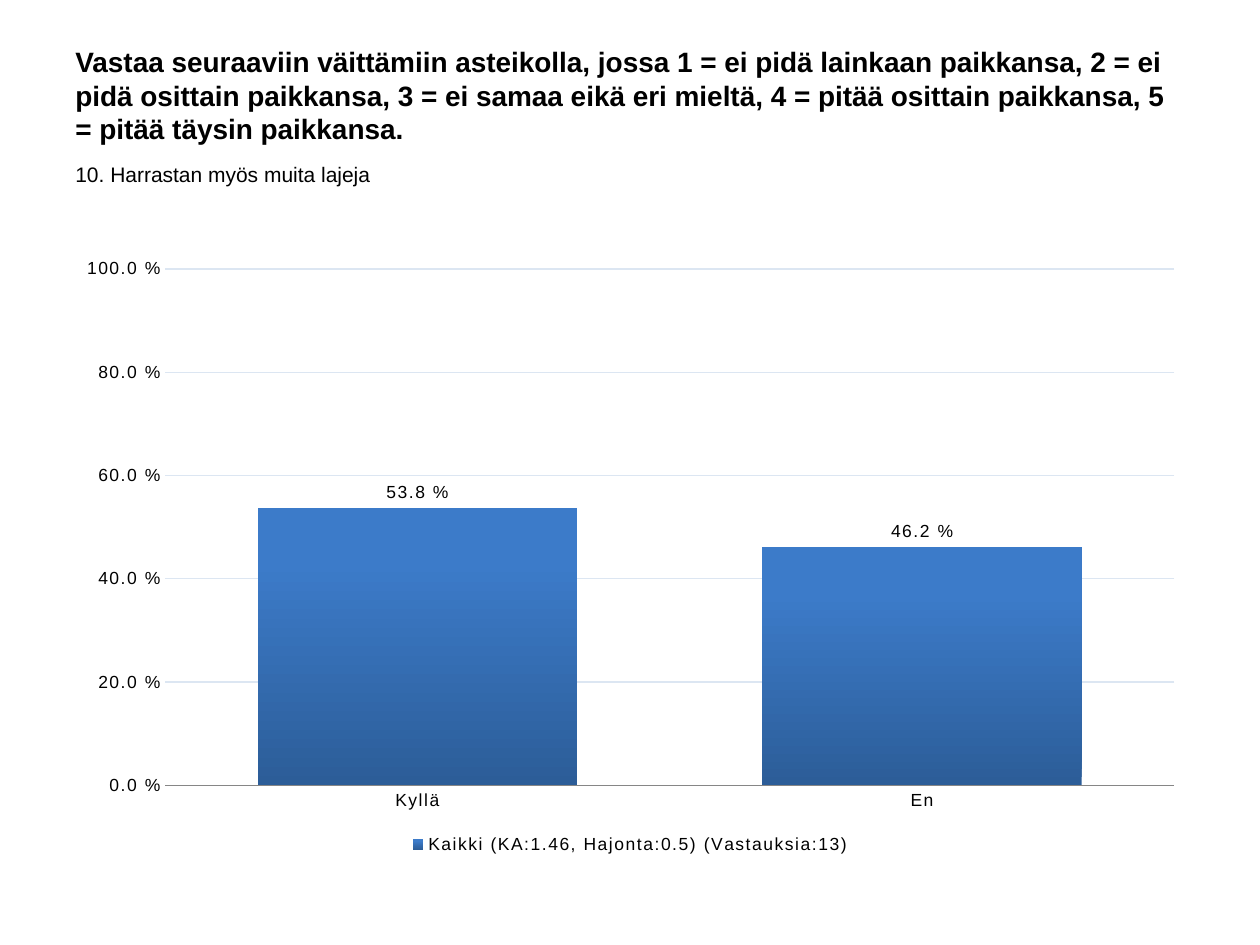
from lxml.etree import SubElement
from pptx import Presentation
from pptx.chart.data import CategoryChartData
from pptx.dml.color import RGBColor
from pptx.enum.chart import (XL_CHART_TYPE, XL_LABEL_POSITION,
                             XL_LEGEND_POSITION, XL_TICK_MARK)
from pptx.enum.text import MSO_ANCHOR
from pptx.oxml.ns import qn
from pptx.util import Inches, Pt

TITLE = ("Vastaa seuraaviin väittämiin asteikolla, jossa 1 = ei pidä lainkaan "
         "paikkansa, 2 = ei pidä osittain paikkansa, 3 = ei samaa eikä eri "
         "mieltä, 4 = pitää osittain paikkansa, 5 = pitää täysin paikkansa.")
TITLE = TITLE.replace("paikkansa, 5", "paikkansa,\u00a05")
QUESTION = "10. Harrastan myös muita lajeja"
SERIES = "Kaikki (KA:1.46, Hajonta:0.5) (Vastauksia:13)"
SHARES = {"Kyllä": 0.538, "En": 0.462}
FORMAT = r"0.0\ %"


def color(value):
    return RGBColor.from_string(value)


def style(font, size, bold=False):
    for name, value in {"name": "Arial", "size": Pt(size), "bold": bold}.items():
        setattr(font, name, value)
    font.fill.solid()
    font.fill.fore_color.rgb = color("000000")


def add_text(slide, box, text, size, bold=False, anchor=MSO_ANCHOR.TOP):
    frame = slide.shapes.add_textbox(*map(Inches, box)).text_frame
    frame.word_wrap = True
    frame.vertical_anchor = anchor
    run = frame.paragraphs[0].add_run()
    run.text = text
    style(run.font, size, bold)


def set_plot(chart, box):
    """Fix the inner plot area, as fractions of the chart."""
    area = chart._chartSpace.chart.plotArea
    for old in area.findall(qn("c:layout")):
        area.remove(old)
    layout = SubElement(area, qn("c:layout"))
    area.insert(0, layout)
    manual = SubElement(layout, qn("c:manualLayout"))
    parts = {"layoutTarget": "inner", "xMode": "edge", "yMode": "edge"}
    parts.update(zip("xywh", box))
    for name, value in parts.items():
        SubElement(manual, qn("c:" + name)).set("val", str(value))


def style_axes(chart):
    shares, groups = chart.value_axis, chart.category_axis
    for axis in (shares, groups):
        axis.major_tick_mark = axis.minor_tick_mark = XL_TICK_MARK.NONE
        style(axis.tick_labels.font, 10)
    for name, value in {"minimum_scale": 0, "maximum_scale": 1,
                        "major_unit": 0.2}.items():
        setattr(shares, name, value)
    shares.tick_labels.number_format = FORMAT
    shares.tick_labels.number_format_is_linked = False
    shares.format.line.fill.background()
    groups.has_major_gridlines = False
    for line, tint in ((shares.major_gridlines.format.line, "DCE6F2"),
                       (groups.format.line, "868686")):
        line.width = Pt(0.75)
        line.color.rgb = color(tint)


def style_bars(plot):
    plot.gap_width = 58
    plot.vary_by_categories = False
    fill = plot.series[0].format.fill
    fill.gradient()
    fill.gradient_angle = 90
    for stop, (place, tint) in zip(fill.gradient_stops,
                                   ((0, "2C5D98"), (0.8, "3C7BC9"))):
        stop.position = place
        stop.color.rgb = color(tint)
    labels = plot.series[0].data_labels
    for name, value in {"show_value": True, "number_format": FORMAT,
                        "number_format_is_linked": False,
                        "position": XL_LABEL_POSITION.OUTSIDE_END}.items():
        setattr(labels, name, value)
    style(labels.font, 10)


def add_bars(slide, box):
    data = CategoryChartData(number_format=FORMAT)
    data.categories = list(SHARES)
    data.add_series(SERIES, list(SHARES.values()))
    chart = slide.shapes.add_chart(XL_CHART_TYPE.COLUMN_CLUSTERED,
                                   *map(Inches, box), data).chart
    chart.has_title = False
    chart.font.name = "Calibri"
    chart.font.size = Pt(10)
    chart.has_legend = True
    chart.legend.position = XL_LEGEND_POSITION.BOTTOM
    chart.legend.include_in_layout = False
    style(chart.legend.font, 10)
    style_axes(chart)
    style_bars(chart.plots[0])
    set_plot(chart, (0.09, 0.04, 0.89, 0.84))
    # Letter spacing of one point in all chart text
    for props in chart._chartSpace.iter(qn("a:defRPr")):
        props.set("spc", "100")


def main():
    deck = Presentation()
    deck.slide_width, deck.slide_height = Inches(10), Inches(7.5)
    slide = deck.slides.add_slide(deck.slide_layouts[6])
    left, width = 0.5, 9
    add_text(slide, (left, 0.36, width, 0.79), TITLE, 16, True, MSO_ANCHOR.MIDDLE)
    add_text(slide, (left, 1.23, width, 0.59), QUESTION, 12)
    add_bars(slide, (left, 1.94, width, 4.88))
    deck.save("out.pptx")


if __name__ == "__main__":
    main()
